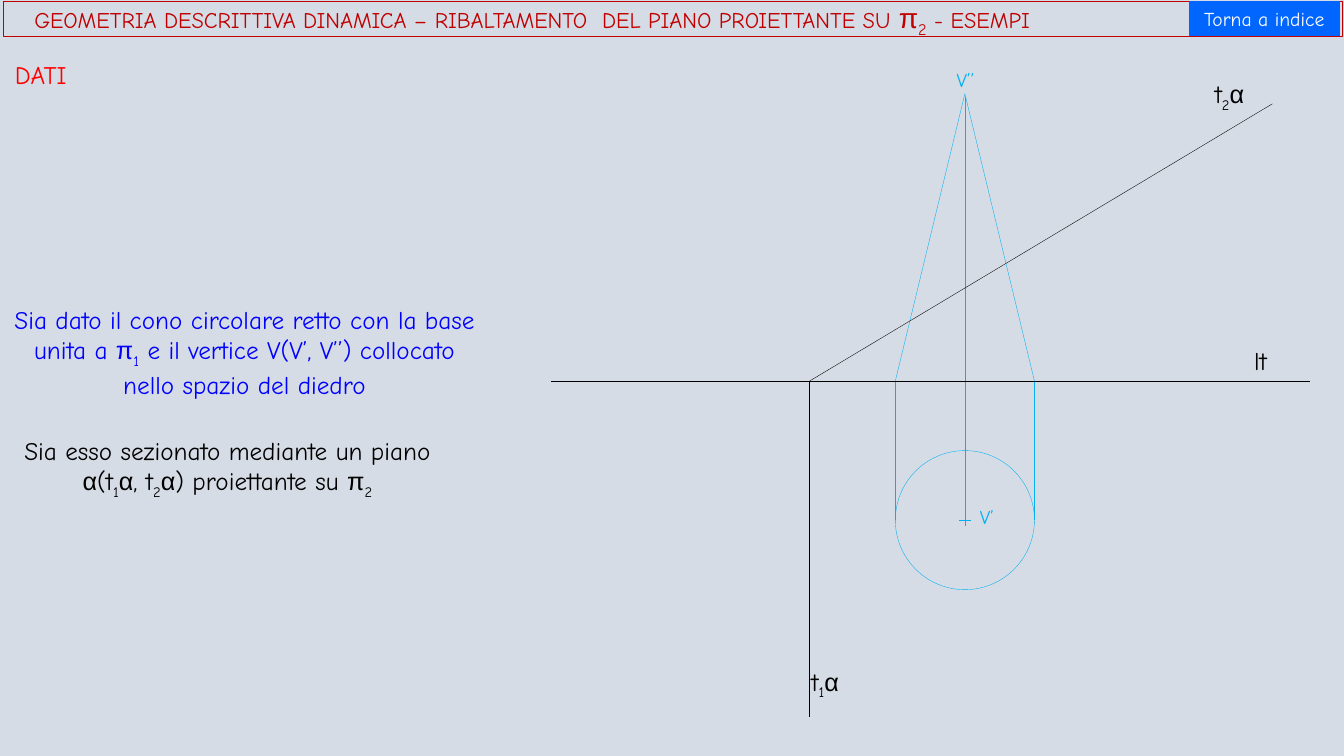
from itertools import groupby

from lxml import etree
from pptx import Presentation
from pptx import util as u
from pptx.dml.color import RGBColor
from pptx.enum import shapes, text
from pptx.oxml.ns import qn

BLACK, WHITE, RED, CRIMSON = "000000", "FFFFFF", "FF0000", "C00000"
BLUE, CYAN, BUTTON_BLUE, BACKGROUND = "0000FF", "00B0F0", "0066FF", "D6DCE5"
CENTER = text.PP_ALIGN.CENTER


def color(value):
    return RGBColor.from_string(value)


def split_runs(content):
    """Yield (text, is_greek, is_subscript); an underscore lowers the next character."""
    marked = [(char, char in "απ", before == "_")
              for before, char in zip(" " + content, content) if char != "_"]
    for (greek, lowered), group in groupby(marked, key=lambda item: item[1:]):
        yield "".join(item[0] for item in group), greek, lowered


class Drawing:
    font, greek_font, line_width = "Comic Neue", "Arial", u.Pt(0.25)

    def __init__(self, slide):
        self.slide = slide
        fill = slide.background.fill
        fill.solid()
        fill.fore_color.rgb = color(BACKGROUND)

    def add_words(self, frame, content, size, ink, symbol_size=None, **paragraph_format):
        paragraph = frame.paragraphs[0]
        for name, value in paragraph_format.items():
            setattr(paragraph, name, value)
        for words, greek, lowered in split_runs(content):
            run = paragraph.add_run()
            run.text = words
            run_size = symbol_size if symbol_size and (greek or lowered) else size
            style = {"name": self.greek_font if greek else self.font,
                     "size": u.Pt(run_size)}
            for name, value in style.items():
                setattr(run.font, name, value)
            run.font.color.rgb = color(ink)
            if lowered:
                run._r.get_or_add_rPr().set("baseline", "-25000")

    def label(self, box, content, size=18, ink=BLACK, **paragraph_format):
        shape = self.slide.shapes.add_textbox(*map(u.Inches, box))
        frame = shape.text_frame
        frame.word_wrap = True
        frame.auto_size = text.MSO_AUTO_SIZE.SHAPE_TO_FIT_TEXT
        self.add_words(frame, content, size, ink, **paragraph_format)

    def line(self, start, end, ink=CYAN):
        connector = self.slide.shapes.add_connector(
            shapes.MSO_CONNECTOR.STRAIGHT, *map(u.Inches, (*start, *end)))
        connector.line.color.rgb = color(ink)
        connector.line.width = self.line_width
        etree.SubElement(connector._element.spPr, qn("a:effectLst"))

    def shape(self, kind, box, fill=None, outline=None):
        shape = self.slide.shapes.add_shape(kind, *map(u.Inches, box))
        shape.shadow.inherit = False
        for paint, value in ((shape.fill, fill), (shape.line.fill, outline)):
            if value:
                paint.solid()
                paint.fore_color.rgb = color(value)
            else:
                paint.background()
        if outline:
            shape.line.width = self.line_width
        shape.text_frame.vertical_anchor = text.MSO_ANCHOR.MIDDLE
        return shape


def draw_cone(drawing):
    axis, radius, ground, center, apex = 9.57, 0.69, 3.78, 5.16, 0.93
    top = center - radius
    drawing.shape(shapes.MSO_SHAPE.OVAL,
                  (axis - radius, top, 2 * radius, 2 * radius), outline=CYAN)
    drawing.line((axis, top), (axis, center))
    drawing.line((axis, top), (axis, 0.96))
    for side in (axis - radius, axis + radius):
        drawing.line((side, center), (side, ground))
        drawing.line((side, ground), (axis, apex))
    tick = 0.06
    drawing.line((axis - tick, center), (axis + tick, center))
    drawing.line((axis, center - tick), (axis, center + tick))
    drawing.label((9.62, 4.96, 0.45, 0.34), "V’", 14, CYAN)
    drawing.label((9.39, 0.62, 0.47, 0.34), "V’’", 14, CYAN)


def draw_planes(drawing):
    origin = (8.03, 3.78)
    drawing.line((5.47, 3.78), (12.99, 3.78), BLACK)
    drawing.line(origin, (8.03, 7.11), BLACK)
    drawing.line(origin, (12.62, 1.03), BLACK)
    drawing.label((12.34, 3.38, 0.56, 0.4), "lt")
    drawing.label((7.95, 6.56, 0.56, 0.4), "t_1α")
    drawing.label((11.95, 0.73, 0.86, 0.4), "t_2α")


def draw_texts(drawing):
    drawing.label((0.05, 0.54, 2.07, 0.4), "DATI", ink=RED)
    drawing.label((0, 2.97, 4.85, 1.01),
                  "Sia dato il cono circolare retto con la base unita a π_1 e il vertice "
                  "V(V’, V’’) collocato nello spazio del diedro", ink=BLUE, alignment=CENTER)
    drawing.label((0, 4.27, 4.51, 0.71),
                  "Sia esso sezionato mediante un piano α(t_1α, t_2α) proiettante su π_2",
                  alignment=CENTER)


def draw_header(drawing):
    title = drawing.shape(shapes.MSO_SHAPE.RECTANGLE, (0.03, 0.01, 13.28, 0.35),
                          outline=CRIMSON)
    title.text_frame.margin_left = u.Inches(0.31)
    drawing.add_words(title.text_frame,
                      "GEOMETRIA DESCRITTIVA DINAMICA – RIBALTAMENTO  DEL PIANO PROIETTANTE "
                      "SU π_2 - ESEMPI", 16, CRIMSON, symbol_size=20,
                      alignment=text.PP_ALIGN.LEFT, line_spacing=0.9)
    button = drawing.shape(shapes.MSO_SHAPE.ACTION_BUTTON_CUSTOM,
                           (11.79, 0.01, 1.5, 0.35), fill=BUTTON_BLUE)
    drawing.add_words(button.text_frame, "Torna a indice", 14, WHITE, alignment=CENTER)


def main():
    presentation = Presentation()
    presentation.slide_width = u.Inches(13.33)
    presentation.slide_height = u.Inches(7.5)
    drawing = Drawing(presentation.slides.add_slide(presentation.slide_layouts[6]))
    draw_cone(drawing)
    draw_planes(drawing)
    draw_texts(drawing)
    draw_header(drawing)
    presentation.save("out.pptx")


if __name__ == "__main__":
    main()
